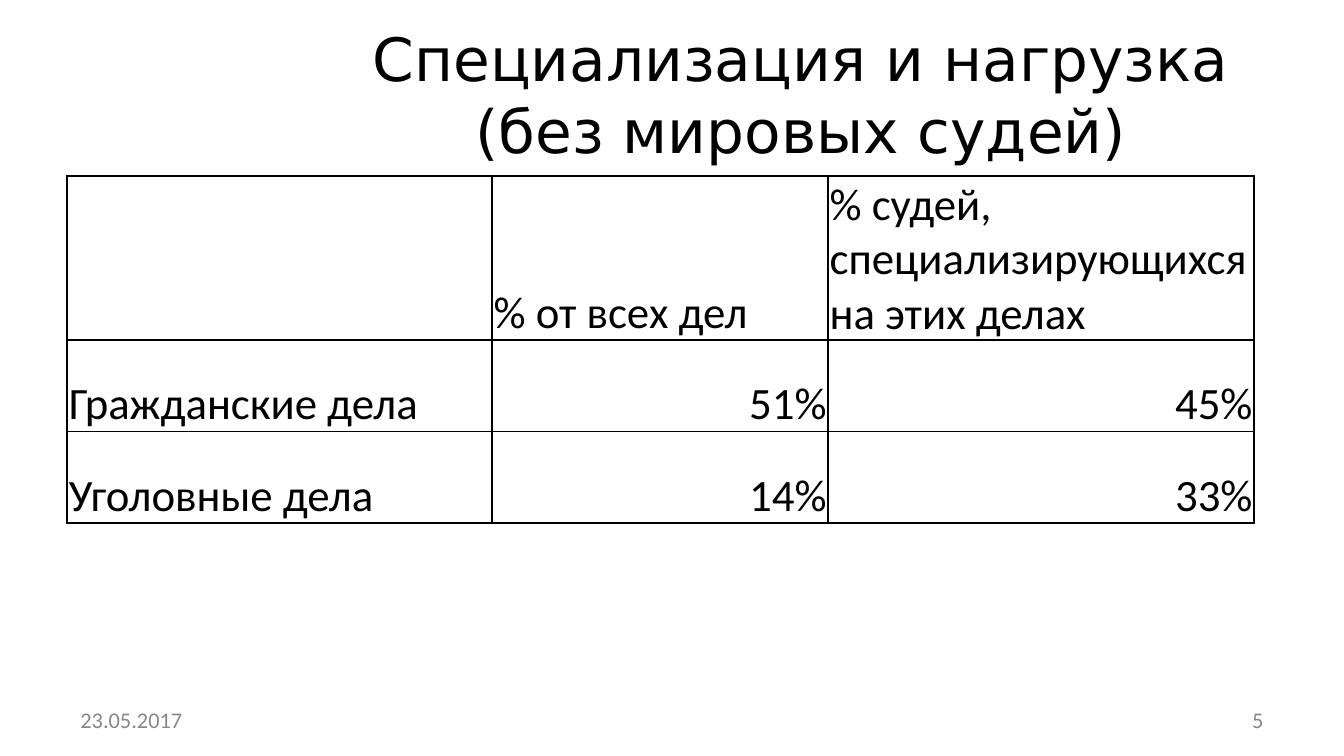
from lxml.etree import SubElement
from pptx import Presentation
from pptx.dml.color import RGBColor
from pptx.enum.text import MSO_ANCHOR, PP_ALIGN
from pptx.oxml.ns import qn
from pptx.util import Cm, Pt

BLACK = RGBColor(0x00, 0x00, 0x00)
GREY = RGBColor(0x88, 0x88, 0x88)
COLUMN_WIDTHS = [8.03, 6.35, 8.05]
ROW_HEIGHTS = [3.1, 1.73, 1.73]
CASE_SHARES = [
    ["", "% от всех дел", "% судей, специализирующихся на этих делах"],
    ["Гражданские дела", "51%", "45%"],
    ["Уголовные дела", "14%", "33%"],
]


def write_text(frame, text, size=24, font="Calibri", color=BLACK, align=PP_ALIGN.LEFT):
    para = frame.paragraphs[0]
    para.alignment = align
    span = para.add_run()
    span.text = text
    span.font.size = Pt(size)
    span.font.name = font
    span.font.color.rgb = color


class SlideBuilder:
    """Holds the table border style and the current slide."""

    def __init__(self, page, border_color=BLACK, border_width=1):
        self.page = page
        self.border_color = border_color
        self.border_width = border_width

    def text_box(self, left, top, width, height, text, **style):
        box = self.page.shapes.add_textbox(Cm(left), Cm(top), Cm(width), Cm(height))
        frame = box.text_frame
        frame.word_wrap = True
        frame.vertical_anchor = MSO_ANCHOR.MIDDLE
        write_text(frame, text, **style)

    def borders(self, cell):
        properties = cell._tc.get_or_add_tcPr()
        for side in ("lnL", "lnR", "lnT", "lnB"):
            line = SubElement(properties, qn(f"a:{side}"), w=str(Pt(self.border_width)))
            fill = SubElement(line, qn("a:solidFill"))
            SubElement(fill, qn("a:srgbClr"), val=str(self.border_color))

    def cell(self, cell, text, align):
        self.borders(cell)
        cell.fill.background()
        cell.vertical_anchor = MSO_ANCHOR.BOTTOM
        cell.margin_left = cell.margin_right = cell.margin_top = Cm(0.03)
        cell.margin_bottom = 0
        if text:
            write_text(cell.text_frame, text, align=align)

    def table(self, left, top, widths, heights, rows):
        table = self.page.shapes.add_table(
            len(rows), len(widths), Cm(left), Cm(top), Cm(sum(widths)), Cm(sum(heights))
        ).table
        table.first_row = table.horz_banding = False
        for column, width in zip(table.columns, widths):
            column.width = Cm(width)
        for row, height in zip(table.rows, heights):
            row.height = Cm(height)
        for r, texts in enumerate(rows):
            for c, text in enumerate(texts):
                align = PP_ALIGN.RIGHT if r and c else PP_ALIGN.LEFT
                self.cell(table.cell(r, c), text, align)


def main():
    deck = Presentation()
    deck.slide_width, deck.slide_height = Cm(25.4), Cm(14.29)
    builder = SlideBuilder(deck.slides.add_slide(deck.slide_layouts[6]))
    builder.text_box(6.15, 0.58, 17.98, 2.39, "Специализация и нагрузка (без мировых судей)",
                     size=32, font="DejaVu Sans", align=PP_ALIGN.CENTER)
    builder.table(1.27, 3.33, COLUMN_WIDTHS, ROW_HEIGHTS, CASE_SHARES)
    builder.text_box(1.27, 13.23, 5.92, 0.76, "23.05.2017", size=12, color=GREY)
    builder.text_box(18.21, 13.23, 5.92, 0.76, "5", size=12, color=GREY, align=PP_ALIGN.RIGHT)
    deck.save("out.pptx")


if __name__ == "__main__":
    main()
